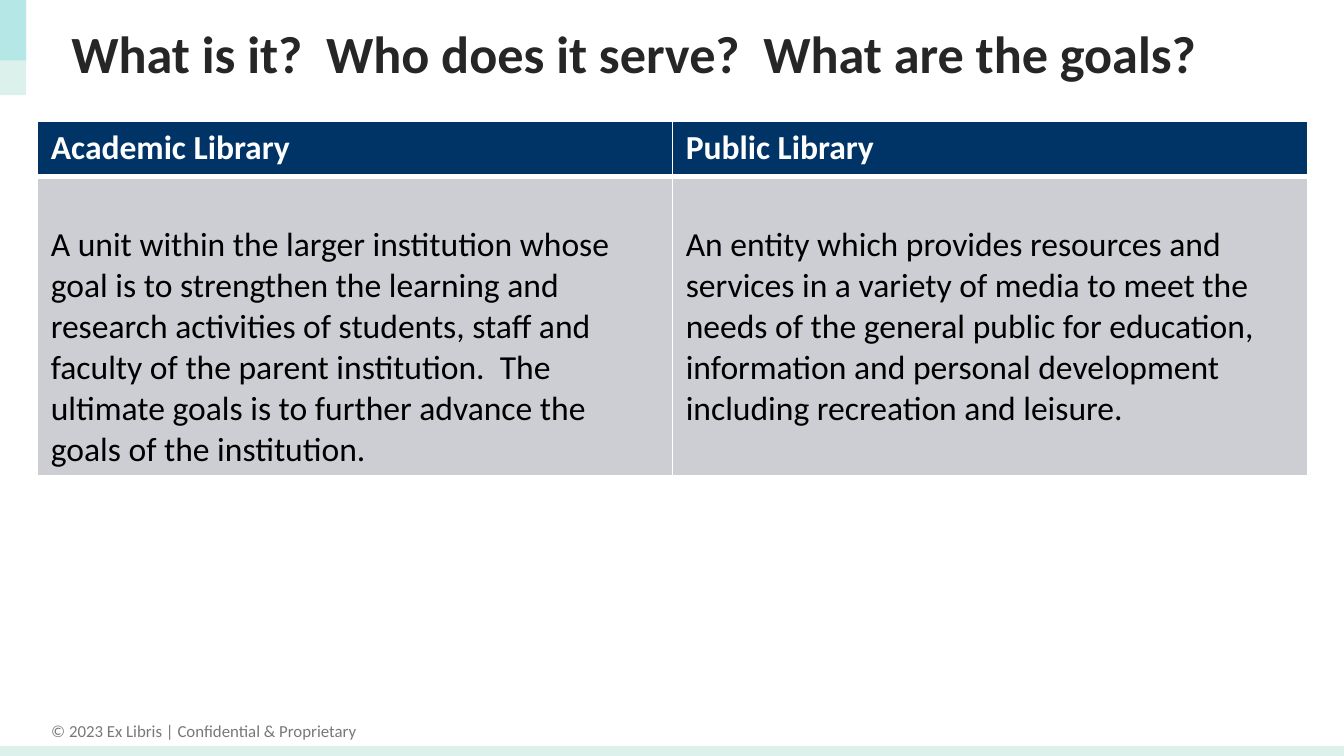
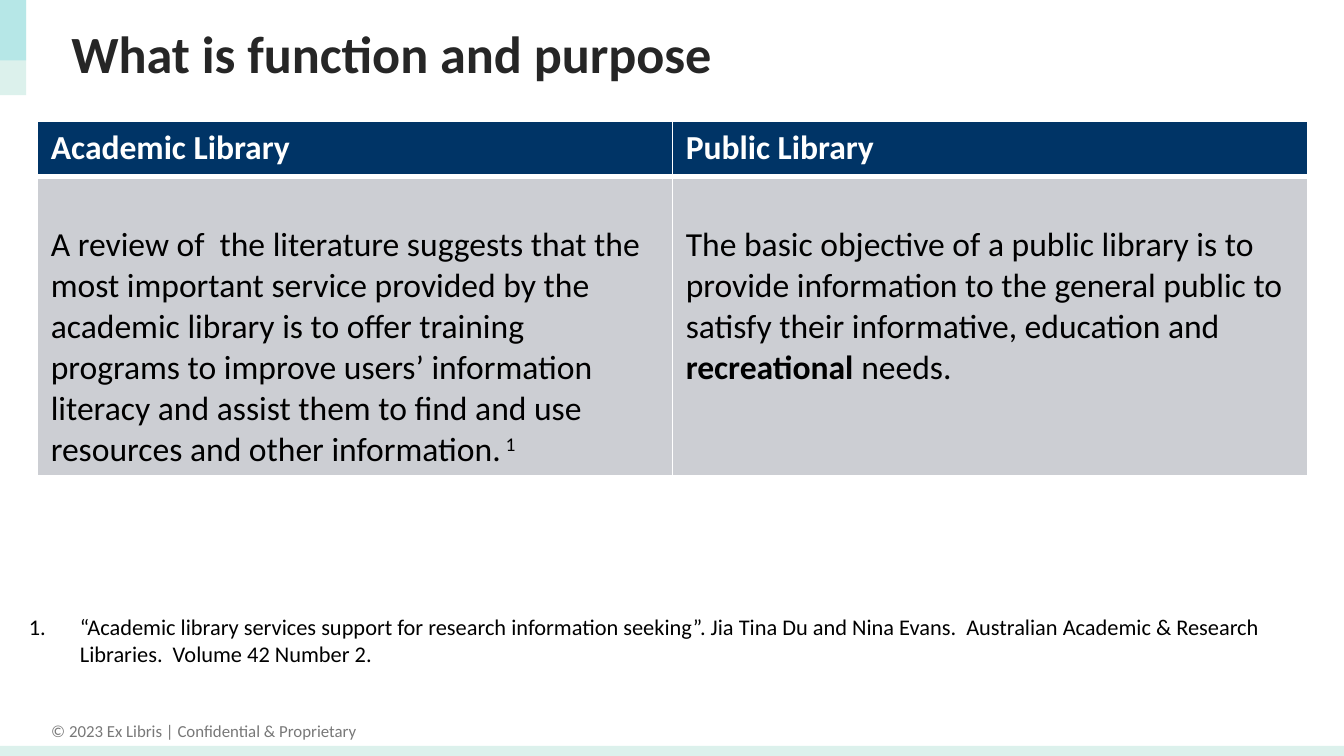
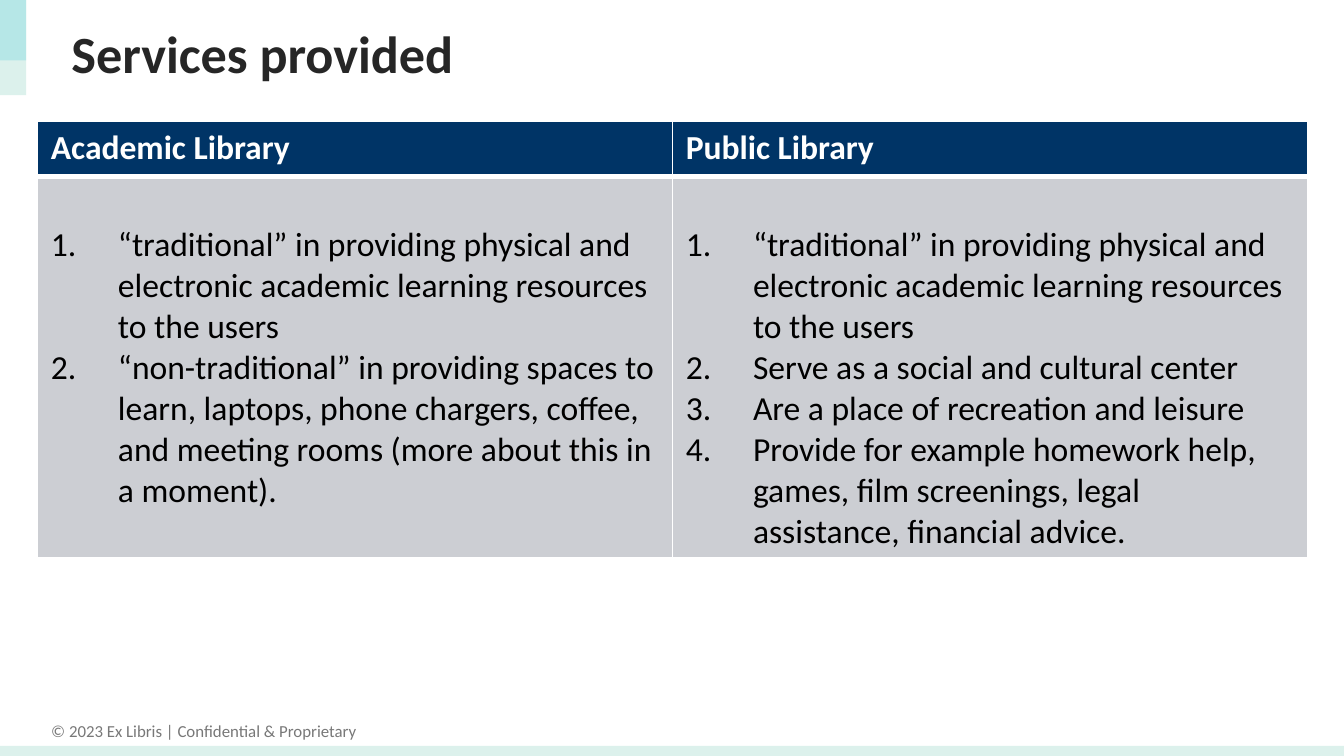
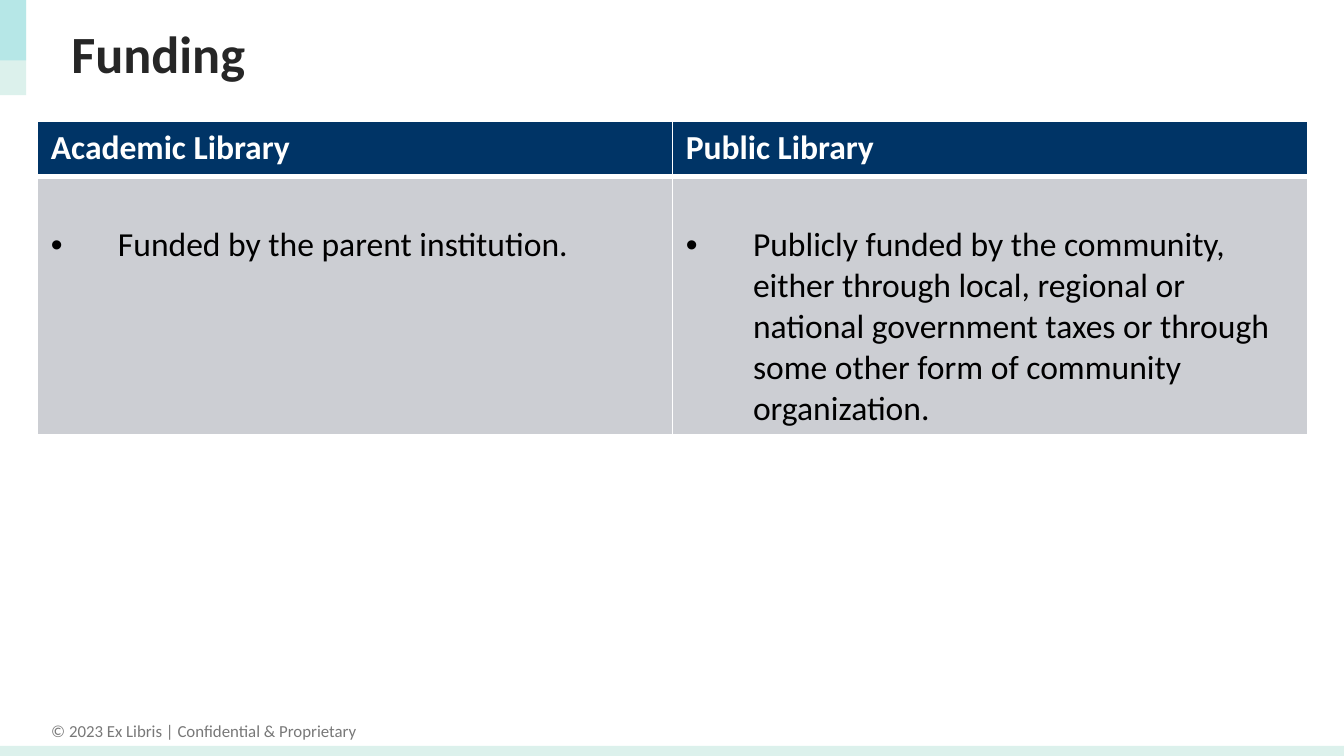
from lxml import etree
from pptx import Presentation
from pptx import util as u
from pptx.dml.color import RGBColor
from pptx.enum import shapes, text
from pptx.oxml import ns

MINT = RGBColor(0xDC, 0xF1, 0xEC)
TURQUOISE = RGBColor(0x50, 0xCF, 0xDA)
NAVY = RGBColor(0x00, 0x34, 0x66)
SILVER = RGBColor(0xCC, 0xCE, 0xD3)
CHARCOAL = RGBColor(0x26, 0x26, 0x26)
GREY = RGBColor(0x78, 0x78, 0x78)
WHITE = RGBColor(0xFF, 0xFF, 0xFF)
BLACK = RGBColor(0x00, 0x00, 0x00)

WIDTH = u.Inches(10)
HEIGHT = WIDTH * 9 // 16
GRID = 100

TITLE_BOX = (4.33, 1.42, 92.1, 11.2)
FOOTER_BOX = (2.7, 94.52, 24.9, 4.44)
TABLE_BOX = (2.78, 16, 94.5)
REFERENCE_BOX = (1.17, 80.25, 97.3, 8.89)
BANDS = [
    ((0, 98.67, 100, 1.33), MINT, None),
    ((0, 0, 1.96, 12.6), MINT, None),
    ((0, 0, 1.96, 8), TURQUOISE, 27),
]

TITLE = {"size": 28, "color": CHARCOAL, "bold": True}
HEADING = {"size": 18, "color": WHITE, "bold": True}
BODY = {"size": 18, "color": BLACK}
REFERENCE = {"size": 12, "color": BLACK}
FOOTER = {"size": 9, "color": GREY}

NUMBERED = ("buAutoNum", {"type": "arabicPeriod"})
BULLETED = ("buChar", {"char": "•"})

FOOTER_TEXT = "© 2023 Ex Libris | Confidential & Proprietary"
HEADINGS = ("Academic Library", "Public Library")
HEADING_ROWS = 7.3
TRADITIONAL = (
    "“traditional” in providing physical and electronic academic "
    "learning resources to the users"
)

SLIDES = [
    {
        "title": "What is it?  Who does it serve?  What are the goals?",
        "rows": 39.65,
        "columns": (
            ["A unit within the larger institution whose goal is to strengthen "
             "the learning and research activities of students, staff and faculty "
             "of the parent institution.  The ultimate goals is to further advance "
             "the goals of the institution."],
            ["An entity which provides resources and services in a variety of media "
             "to meet the needs of the general public for education, information "
             "and personal development including recreation and leisure."],
        ),
    },
    {
        "title": "What is function and purpose",
        "rows": 39.65,
        "columns": (
            [[("A review of  the literature suggests that the most important service "
               "provided by the academic library is to offer training programs to "
               "improve users’ information literacy and assist them to find and use "
               "resources and other information.", {}),
              (" 1", {"baseline": 30})]],
            [[("The basic objective of a public library is to provide information to "
               "the general public to satisfy their informative, education and ", {}),
              ("recreational", {"bold": True}),
              (" needs.", {})]],
        ),
        "reference": "“Academic library services support for research information "
                     "seeking”. Jia Tina Du and Nina Evans.  Australian Academic & "
                     "Research Libraries.  Volume 42 Number 2.",
    },
    {
        "title": "Services provided",
        "rows": 50.5,
        "marker": NUMBERED,
        "columns": (
            [TRADITIONAL,
             "“non-traditional” in providing spaces to learn, laptops, phone "
             "chargers, coffee, and meeting rooms (more about this in a moment)."],
            [TRADITIONAL,
             "Serve as a social and cultural center",
             "Are a place of recreation and leisure",
             "Provide for example homework help, games, film screenings, legal "
             "assistance, financial advice."],
        ),
    },
    {
        "title": "Funding",
        "rows": 34.25,
        "marker": BULLETED,
        "columns": (
            ["Funded by the parent institution."],
            ["Publicly funded by the community, either through local, regional or "
             "national government taxes or through some other form of community "
             "organization."],
        ),
    },
]


def across(columns):
    """Return the width of a number of grid columns."""
    return int(WIDTH * columns / GRID)


def down(rows):
    """Return the height of a number of grid rows."""
    return int(HEIGHT * rows / GRID)


def place(box):
    """Turn a grid box into left, top, width and height."""
    left, top, width, height = box
    return across(left), down(top), across(width), down(height)


def add_element(parent, tag, attributes):
    """Append a drawing element to a parent and return it."""
    element = etree.SubElement(parent, ns.qn(f"a:{tag}"))
    for name, value in attributes.items():
        element.set(name, str(value))
    return element


def format_run(run, style):
    """Apply a dict of format values to a run."""
    values = {"name": "Calibri", "bold": False, **style}
    run.font.color.rgb = values.pop("color")
    baseline = values.pop("baseline", None)
    values["size"] = u.Pt(values["size"])
    for name, value in values.items():
        setattr(run.font, name, value)
    if baseline:
        run._r.get_or_add_rPr().set("baseline", str(baseline * 1000))


def mark_paragraph(paragraph, marker, indent):
    """Give a paragraph a hanging bullet or number."""
    tag, attributes = marker
    properties = paragraph._p.get_or_add_pPr()
    properties.set("marL", str(u.Inches(indent)))
    properties.set("indent", str(-u.Inches(indent)))
    add_element(properties, "buFont", {"typeface": "Arial" if tag == "buChar" else "+mj-lt"})
    add_element(properties, tag, attributes)


def write(frame, paragraphs, style, marker=None, indent=0.5):
    """Fill a text frame with paragraphs of plain or mixed runs."""
    for index, content in enumerate(paragraphs):
        paragraph = frame.add_paragraph() if index else frame.paragraphs[0]
        if marker:
            mark_paragraph(paragraph, marker, indent)
        pieces = [(content, {})] if isinstance(content, str) else content
        for words, changes in pieces:
            run = paragraph.add_run()
            run.text = words
            format_run(run, {**style, **changes})


def add_text(slide, box, words, style, settings, **marking):
    """Add a text box whose frame takes a dict of settings."""
    frame = slide.shapes.add_textbox(*place(box)).text_frame
    for name, value in {"word_wrap": True, **settings}.items():
        setattr(frame, name, value)
    write(frame, [words], style, **marking)
    return frame


def add_band(slide, box, color, opacity):
    """Add a plain colour band, see-through if an opacity is given."""
    band = slide.shapes.add_shape(shapes.MSO_SHAPE.RECTANGLE, *place(box))
    band.shadow.inherit = False
    band.fill.solid()
    band.fill.fore_color.rgb = color
    band.line.fill.background()
    if opacity:
        color_element = band._element.spPr.find(".//" + ns.qn("a:srgbClr"))
        add_element(color_element, "alpha", {"val": opacity * 1000})


def add_frame(slide, title):
    """Add the footer, bands and title that every slide shares."""
    fit = {"word_wrap": False, "auto_size": text.MSO_AUTO_SIZE.SHAPE_TO_FIT_TEXT}
    footer = add_text(slide, FOOTER_BOX, FOOTER_TEXT, FOOTER, fit)
    footer.paragraphs[0].alignment = text.PP_ALIGN.CENTER
    for box, color, opacity in BANDS:
        add_band(slide, box, color, opacity)
    add_text(slide, TITLE_BOX, title, TITLE, {"vertical_anchor": text.MSO_ANCHOR.MIDDLE})


def style_cell(cell, color, top, bottom):
    """Give a cell white borders and a solid fill."""
    properties = cell._tc.get_or_add_tcPr()
    for side, points in {"L": 1, "R": 1, "T": top, "B": bottom}.items():
        line = add_element(properties, f"ln{side}", {"w": u.Pt(points)})
        add_element(add_element(line, "solidFill", {}), "srgbClr", {"val": WHITE})
    cell.fill.solid()
    cell.fill.fore_color.rgb = color


def add_comparison(slide, box, columns, rows, marker):
    """Add the two-column library table with headings above its text."""
    left, top, width = box
    area = place((left, top, width, HEADING_ROWS + rows))
    table = slide.shapes.add_table(2, len(HEADINGS), *area).table
    table.horz_banding = False
    table.rows[0].height = down(HEADING_ROWS)
    table.rows[1].height = down(rows)
    for column, (heading, paragraphs) in enumerate(zip(HEADINGS, columns)):
        head, body = table.cell(0, column), table.cell(1, column)
        style_cell(head, NAVY, 1, 3)
        style_cell(body, SILVER, 3, 1)
        body.margin_top = u.Inches(0.36)
        write(head.text_frame, [heading], HEADING)
        write(body.text_frame, paragraphs, BODY, marker)


def add_comparison_slide(presentation, content):
    """Add one slide comparing the two kinds of library."""
    slide = presentation.slides.add_slide(presentation.slide_layouts[6])
    add_frame(slide, content["title"])
    add_comparison(slide, TABLE_BOX, content["columns"], content["rows"], content.get("marker"))
    if "reference" in content:
        fit = {"auto_size": text.MSO_AUTO_SIZE.SHAPE_TO_FIT_TEXT}
        add_text(slide, REFERENCE_BOX, content["reference"], REFERENCE, fit,
                 marker=NUMBERED, indent=0.38)


def main():
    """Build the slides and save them."""
    presentation = Presentation()
    presentation.slide_width, presentation.slide_height = WIDTH, HEIGHT
    for content in SLIDES:
        add_comparison_slide(presentation, content)
    presentation.save("out.pptx")


if __name__ == "__main__":
    main()
